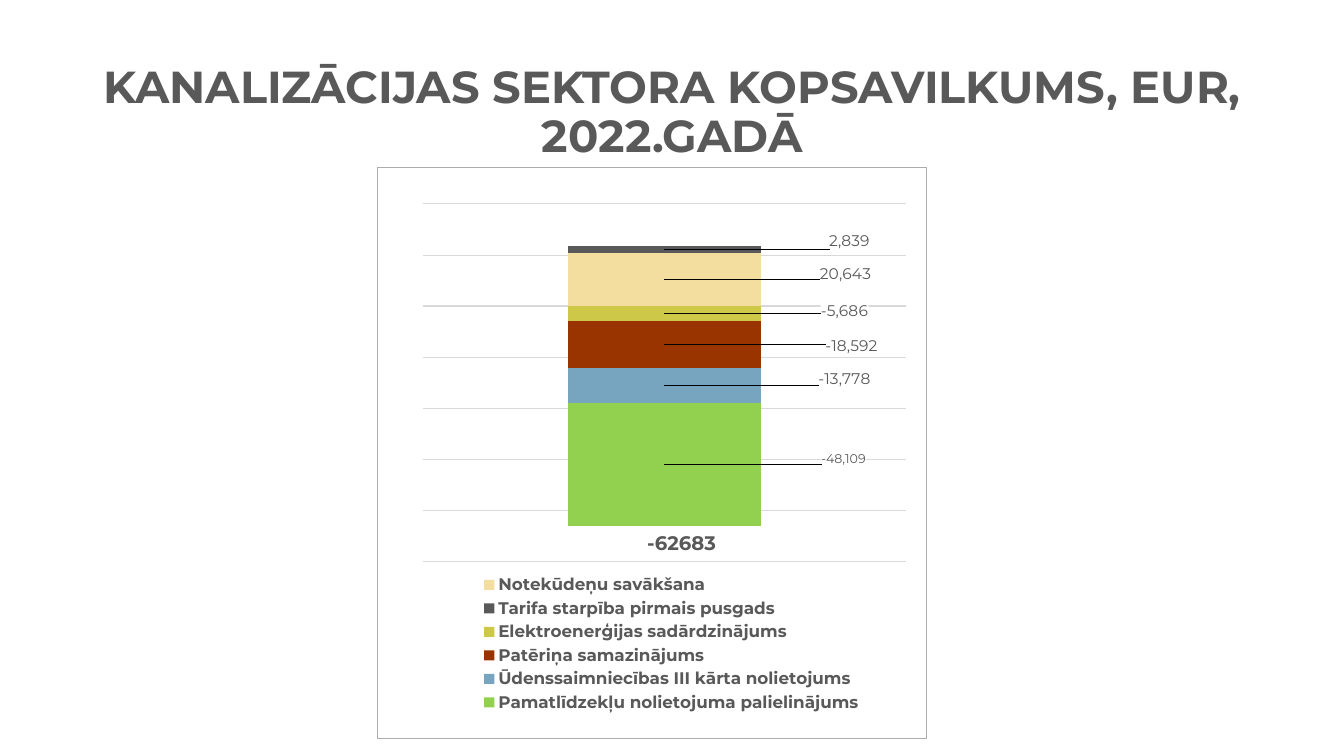
from lxml import etree
from pptx import Presentation
from pptx.chart.data import CategoryChartData
from pptx.dml.color import RGBColor
from pptx.enum import chart as chart_enum, text
from pptx.oxml import parse_xml
from pptx.oxml.ns import nsdecls, qn
from pptx.util import Inches, Pt

FONT = "Montserrat"
GRAY = RGBColor(0x59, 0x59, 0x59)
GRID = RGBColor(0xD9, 0xD9, 0xD9)
SAND = RGBColor(0xF3, 0xDE, 0xA0)
OLIVE = RGBColor(0xCD, 0xC8, 0x47)
RUST = RGBColor(0x99, 0x33, 0x00)
BLUE = RGBColor(0x77, 0xA4, 0xBE)
GREEN = RGBColor(0x92, 0xD0, 0x50)

CHART_WIDTH, CHART_HEIGHT = 5.45, 5.67
NUMBER_FORMAT = "#,##0"

# name, value, colour, label size, label offset in inches
COST_ITEMS = [
    ("Notekūdeņu savākšana", 20643, SAND, 11, (1.8, -0.06)),
    ("Tarifa starpība pirmais pusgads", 2839, GRAY, 11, (1.84, -0.09)),
    ("Elektroenerģijas sadārdzinājums", -5686, OLIVE, 11, (1.79, -0.03)),
    ("Patēriņa samazinājums", -18592, RUST, 11, (1.86, 0.01)),
    ("Ūdenssaimniecības III kārta nolietojums", -13778, BLUE, 11, (1.79, -0.07)),
    ("Pamatlīdzekļu nolietojuma palielinājums", -48109, GREEN, 9, (1.78, -0.06)),
]


def manual_layout(x, y, width=None, height=None, inner=False):
    """Return a c:layout from inches: an offset, or an area if a size is given."""
    layout = parse_xml(f"<c:layout {nsdecls('c')}><c:manualLayout/></c:layout>")
    settings = [("layoutTarget", "inner")] if inner else []
    if width is not None:
        settings += [("xMode", "edge"), ("yMode", "edge")]
    settings += [("x", x / CHART_WIDTH), ("y", y / CHART_HEIGHT)]
    if width is not None:
        settings += [("w", width / CHART_WIDTH), ("h", height / CHART_HEIGHT)]
    for tag, value in settings:
        etree.SubElement(layout[0], qn(f"c:{tag}")).set("val", str(value))
    return layout


def style_font(font, size, bold):
    font.name = FONT
    font.size = Pt(size)
    font.bold = bold
    font.color.rgb = GRAY


presentation = Presentation()
presentation.slide_width = Inches(13.33)
presentation.slide_height = Inches(7.5)
slide = presentation.slides.add_slide(presentation.slide_layouts[6])

# Title
title = slide.shapes.add_textbox(Inches(0.92), Inches(0.4), Inches(11.5), Inches(1.45))
title.text_frame.word_wrap = True
title.text_frame.vertical_anchor = text.MSO_ANCHOR.MIDDLE
paragraph = title.text_frame.paragraphs[0]
paragraph.text = "KANALIZĀCIJAS SEKTORA KOPSAVILKUMS, EUR, 2022.GADĀ"
paragraph.alignment = text.PP_ALIGN.CENTER
paragraph.line_spacing = 0.9
style_font(paragraph.font, 32, True)

# Stacked column
chart_data = CategoryChartData(number_format=NUMBER_FORMAT)
chart_data.categories = ["1"]
for name, value, *_ in COST_ITEMS:
    chart_data.add_series(name, [value])
chart = slide.shapes.add_chart(
    chart_enum.XL_CHART_TYPE.COLUMN_STACKED, Inches(3.74), Inches(1.66),
    Inches(CHART_WIDTH), Inches(CHART_HEIGHT), chart_data,
).chart
chart.has_title = False
chart.font.name = "Calibri"
chart.font.size = Pt(10)

plot = chart.plots[0]
plot.gap_width = 150
plot.overlap = 100
plot.vary_by_categories = False

chart.category_axis.visible = False
value_axis = chart.value_axis
value_axis.visible = False
value_axis.minimum_scale = -100000
value_axis.maximum_scale = 40000
value_axis.major_unit = 20000
value_axis.tick_labels.number_format = NUMBER_FORMAT
value_axis.tick_labels.number_format_is_linked = False
value_axis.has_major_gridlines = True
value_axis.major_gridlines.format.line.color.rgb = GRID
value_axis.major_gridlines.format.line.width = Pt(0.75)

for series, (_, _, color, label_size, offset) in zip(plot.series, COST_ITEMS):
    series.invert_if_negative = False
    series.format.fill.solid()
    series.format.fill.fore_color.rgb = color
    labels = series.data_labels
    labels.show_value = True
    labels.number_format = NUMBER_FORMAT
    labels.number_format_is_linked = False
    style_font(labels.font, label_size, False)
    style_font(series.points[0].data_label.font, label_size, False)
    label = series._element.find(".//" + qn("c:dLbl"))
    label.find(qn("c:idx")).addnext(manual_layout(*offset))
    for tag in ("c:spPr", "c:numFmt"):
        for element in label.findall(qn(tag)):
            label.remove(element)
    text_properties = label.find(qn("c:txPr"))
    text_properties.addprevious(parse_xml(
        f'<c:numFmt {nsdecls("c")} formatCode="{NUMBER_FORMAT}" sourceLinked="0"/>'))
    text_properties.addprevious(parse_xml(
        f"<c:spPr {nsdecls('c', 'a')}><a:solidFill>"
        '<a:srgbClr val="FFFFFF"/></a:solidFill></c:spPr>'))
    # Labels stand beside the column without leader lines
    label_group = label.getparent()
    for leader_lines in label_group.findall(qn("c:showLeaderLines")):
        label_group.remove(leader_lines)
    label_group.append(parse_xml(
        f"<c:extLst {nsdecls('c')}>"
        '<c:ext uri="{CE6537A1-D6FC-4f65-9D91-7224C49458BB}" '
        'xmlns:c15="http://schemas.microsoft.com/office/drawing/2012/chart">'
        '<c15:showLeaderLines val="0"/></c:ext></c:extLst>'))

# Legend, plot area and frame
chart.has_legend = True
legend = chart.legend
legend.position = chart_enum.XL_LEGEND_POSITION.BOTTOM
legend.include_in_layout = False
style_font(legend.font, 12, True)
for layout in legend._element.findall(qn("c:layout")):
    legend._element.remove(layout)
legend._element.find(qn("c:legendPos")).addnext(manual_layout(1.01, 4.01, 3.82, 1.44))

plot_area = chart._chartSpace.chart.plotArea
for layout in plot_area.findall(qn("c:layout")):
    plot_area.remove(layout)
plot_area.insert(0, manual_layout(0.45, 0.36, 4.8, 3.55, inner=True))

chart._chartSpace.chart.addnext(parse_xml(
    f"<c:spPr {nsdecls('c', 'a')}>"
    '<a:solidFill><a:srgbClr val="FFFFFF"/></a:solidFill>'
    '<a:ln w="9525"><a:solidFill><a:srgbClr val="AFABAB"/></a:solidFill></a:ln>'
    "</c:spPr>"))

# Total below the column
total = slide.shapes.add_textbox(Inches(6.32), Inches(5.22), Inches(0.92), Inches(0.34))
total.text_frame.word_wrap = True
paragraph = total.text_frame.paragraphs[0]
paragraph.text = "-62683"
style_font(paragraph.font, 14, True)

presentation.save("out.pptx")
